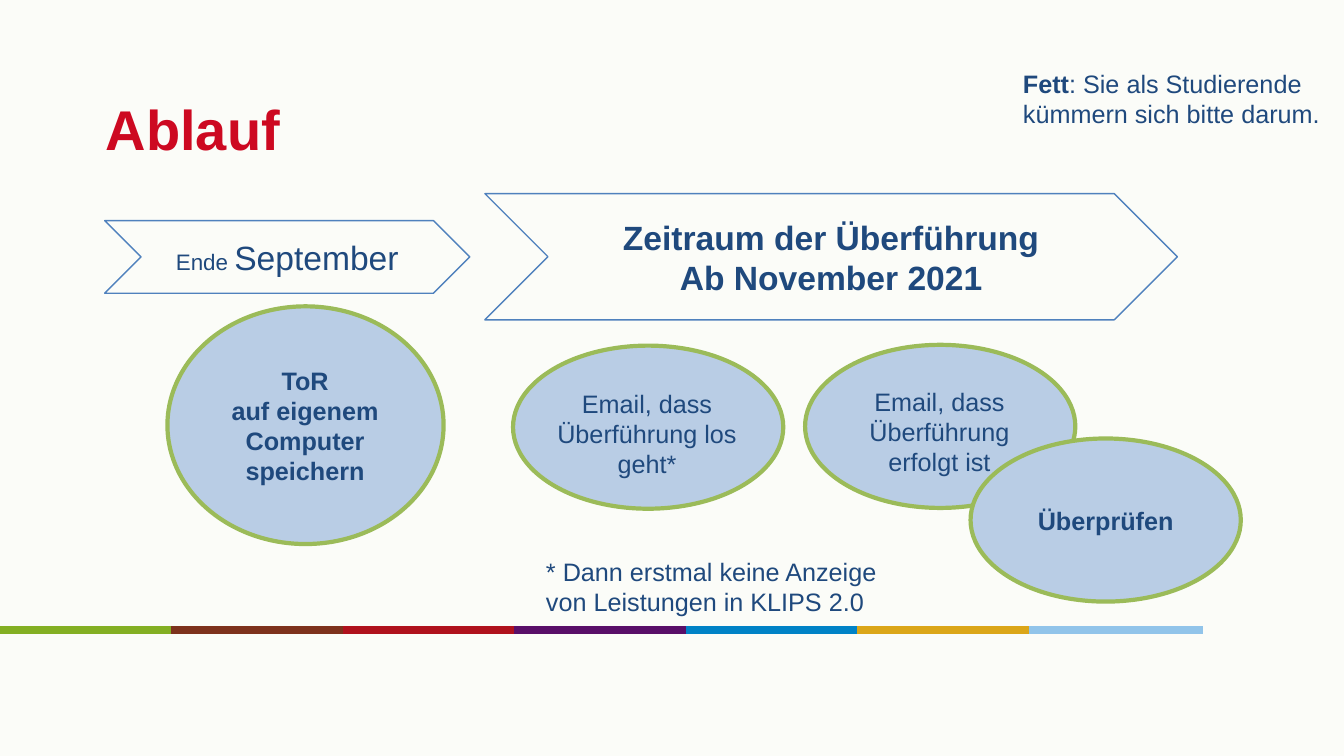
"""Build the slide "Ablauf" with its timeline, steps and colour bar."""
from lxml import etree
from pptx import Presentation
from pptx.dml.color import RGBColor
from pptx.enum.shapes import MSO_CONNECTOR, MSO_SHAPE
from pptx.enum.text import MSO_ANCHOR, PP_ALIGN
from pptx.oxml.ns import qn
from pptx.util import Cm, Pt

CHEVRON, ELLIPSE = MSO_SHAPE.CHEVRON, MSO_SHAPE.OVAL
STRAIGHT = MSO_CONNECTOR.STRAIGHT
LEFT, CENTER = PP_ALIGN.LEFT, PP_ALIGN.CENTER
TOP, MIDDLE = MSO_ANCHOR.TOP, MSO_ANCHOR.MIDDLE

COLORS = {
    "paper": "FBFCF8", "title": "CD0921", "text": "1F497D",
    "phase": "4F81BD", "step": "B9CDE5", "rim": "9BBB59",
}
STRIPES = ["83AF23", "7D321D", "AF111D", "590F68", "0082C6", "DBA619", "91C4EA"]
STRIPE_Y, STRIPE_STEP, STRIPE_LENGTH = 15.88, 4.32, 4.4

TITLE = ((2.54, 1.65, 28.78, 3.18), [[("Ablauf", 40, True)]])
PHASES = [
    ((12.22, 4.88, 17.45, 3.18), [[("Zeitraum der Überführung", 24, True)],
                                  [("Ab November 2021", 24, True)]]),
    ((2.64, 5.56, 9.2, 1.83), [[("Ende ", 16, False), ("September", 24, False)]]),
]
STEPS = [
    ((4.22, 7.72, 6.96, 5.99), (4.83, 9.07, 5.72, 3.33),
     [[("ToR", 18, True)], [("auf eigenem Computer speichern", 18, True)]]),
    ((12.93, 8.71, 6.81, 4.11), (13.51, 9.65, 5.59, 2.57),
     [[("Email, dass Überführung los geht*", 18, False)]]),
    ((20.29, 8.69, 6.81, 4.11), (20.88, 9.6, 5.59, 2.57),
     [[("Email, dass Überführung erfolgt ist", 18, False)]]),
    ((24.46, 11.05, 6.81, 4.11), (25.07, 12.62, 5.59, 1.02),
     [[("Überprüfen", 18, True)]]),
]
NOTES = [
    ((25.53, 1.6, 8.81, 1.8),
     [[("Fett", 18, True), (": Sie als Studierende kümmern sich bitte darum.", 18, False)]]),
    ((13.51, 13.89, 9.27, 2.57),
     [[("* Dann erstmal keine Anzeige von Leistungen in KLIPS 2.0", 18, False)]]),
]


def rgb(name):
    return RGBColor.from_string(COLORS[name])


def write(tf, lines, align=LEFT, anchor=TOP, color="text"):
    tf.word_wrap = True
    tf.vertical_anchor = anchor
    for i, runs in enumerate(lines):
        p = tf.add_paragraph() if i else tf.paragraphs[0]
        p.alignment = align
        for text, size, bold in runs:
            r = p.add_run()
            r.text = text
            r.font.color.rgb = rgb(color)
            for key, value in {"name": "Arial", "size": Pt(size), "bold": bold}.items():
                setattr(r.font, key, value)


def add_outlined(shapes, kind, box, fill, line, width):
    s = shapes.add_shape(kind, *map(Cm, box))
    s.shadow.inherit = False
    s.fill.solid()
    s.fill.fore_color.rgb = rgb(fill)
    s.line.color.rgb = rgb(line)
    s.line.width = Pt(width)
    return s


def add_text(shapes, box, lines, align=LEFT):
    write(shapes.add_textbox(*map(Cm, box)).text_frame, lines, align)


def add_stripe(shapes, i, color):
    x = i * STRIPE_STEP
    s = shapes.add_connector(STRAIGHT, Cm(x), Cm(STRIPE_Y),
                             Cm(x + STRIPE_LENGTH), Cm(STRIPE_Y))
    s.line.color.rgb = RGBColor.from_string(color)
    s.line.width = Pt(5.5)
    etree.SubElement(s._element.spPr, qn("a:effectLst"))


def add_title(s):
    box, lines = TITLE
    s.left, s.top, s.width, s.height = map(Cm, box)
    tf = s.text_frame
    for side in ("left", "top", "right", "bottom"):
        setattr(tf, f"margin_{side}", Cm(0.13))
    write(tf, lines, anchor=MIDDLE, color="title")


def main():
    prs = Presentation()
    prs.slide_width, prs.slide_height = Cm(33.87), Cm(19.05)
    slide = prs.slides.add_slide(prs.slide_layouts[5])
    slide.background.fill.solid()
    slide.background.fill.fore_color.rgb = rgb("paper")
    shapes = slide.shapes
    add_title(shapes.title)
    for i, color in enumerate(STRIPES):
        add_stripe(shapes, i, color)
    for box, lines in PHASES:
        s = add_outlined(shapes, CHEVRON, box, "paper", "phase", 1)
        write(s.text_frame, lines, CENTER, MIDDLE)
    for oval, box, lines in STEPS:
        group = shapes.add_group_shape().shapes
        add_outlined(group, ELLIPSE, oval, "step", "rim", 3)
        add_text(group, box, lines, CENTER)
    for box, lines in NOTES:
        add_text(shapes, box, lines)
    prs.save("out.pptx")


if __name__ == "__main__":
    main()
